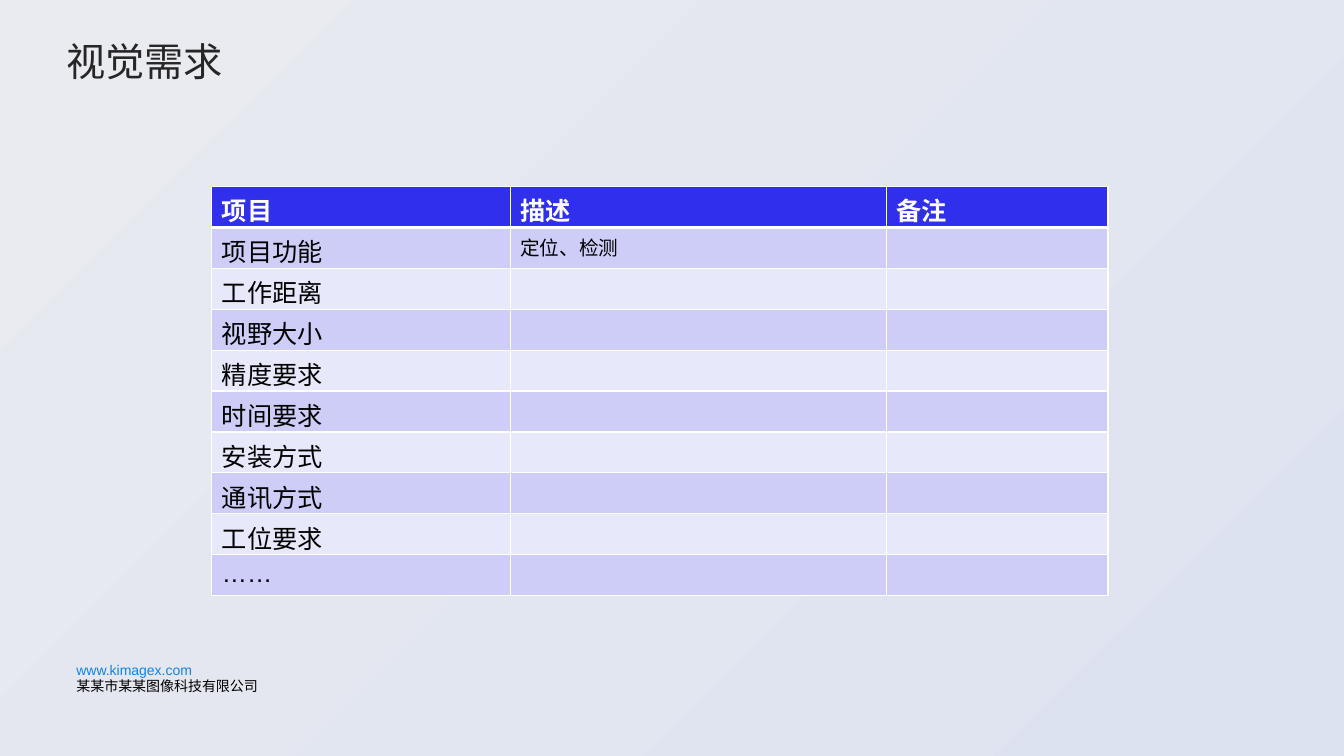
from lxml.etree import SubElement
from pptx import Presentation
from pptx.dml.color import RGBColor
from pptx.enum.text import MSO_ANCHOR, MSO_AUTO_SIZE, PP_ALIGN
from pptx.oxml.ns import qn
from pptx.util import Inches, Pt

COLORS = {
    "background_start": "EAEBF0",
    "background_end": "DDE2F1",
    "title": "262626",
    "link": "1181E9",
    "text": "000000",
    "white": "FFFFFF",
    "header": "2F2FEC",
    "band_dark": "CDCDF8",
    "band_light": "E8E8FB",
}
CJK_FONT = "Noto Sans CJK SC"
COLUMN_WIDTHS = [2.96, 3.73, 2.2]
TABLE_HEIGHT = 4.06
REQUIREMENTS = [
    ["项目", "描述", "备注"],
    ["项目功能", "定位、检测", ""],
    ["工作距离", "", ""],
    ["视野大小", "", ""],
    ["精度要求", "", ""],
    ["时间要求", "", ""],
    ["安装方式", "", ""],
    ["通讯方式", "", ""],
    ["工位要求", "", ""],
    ["……", "", ""],
]


def rgb(name):
    return RGBColor.from_string(COLORS[name])


def add_span(para, text, size, color, font="Arial", bold=False):
    span = para.add_run()
    span.text = text
    span.font.size = Pt(size)
    span.font.bold = bold
    span.font.color.rgb = rgb(color)
    span.font.name = font
    SubElement(span.font._element, qn("a:ea"), typeface=CJK_FONT)


def paint_background(page):
    fill = page.background.fill
    fill.gradient()
    fill.gradient_angle = 315
    for stop, position, color in zip(
        fill.gradient_stops, (0, 1), ("background_start", "background_end")
    ):
        stop.position = position
        stop.color.rgb = rgb(color)


def set_title(page, text):
    title = page.shapes.title
    title.left, title.top = Inches(0.66), Inches(0.37)
    title.width, title.height = Inches(1.56), Inches(0.47)
    frame = title.text_frame
    frame.margin_left = frame.margin_right = 0
    frame.margin_top = frame.margin_bottom = 0
    frame.word_wrap = False
    frame.auto_size = MSO_AUTO_SIZE.NONE
    frame.vertical_anchor = MSO_ANCHOR.MIDDLE
    para = frame.paragraphs[0]
    para.alignment = PP_ALIGN.LEFT
    add_span(para, text, 28, "title", CJK_FONT)


def add_footer(page):
    box = page.shapes.add_textbox(
        Inches(0.66), Inches(6.51), Inches(2.2), Inches(0.44)
    )
    frame = box.text_frame
    frame.word_wrap = True
    add_span(frame.paragraphs[0], "www.kimagex.com", 10, "link")
    add_span(frame.add_paragraph(), "某某市某某图像科技有限公司", 10, "text")


def set_borders(cell, bottom_width):
    properties = cell._tc.get_or_add_tcPr()
    widths = {"a:lnL": 1, "a:lnR": 1, "a:lnT": 1, "a:lnB": bottom_width}
    for index, (side, width) in enumerate(widths.items()):
        line = SubElement(properties, qn(side), w=str(Pt(width)))
        fill = SubElement(line, qn("a:solidFill"))
        SubElement(fill, qn("a:srgbClr"), val=COLORS["white"])
        properties.insert(index, line)


def fill_cell(cell, text, row, column):
    is_header = row == 0
    band = "band_dark" if row % 2 else "band_light"
    cell.fill.solid()
    cell.fill.fore_color.rgb = rgb("header" if is_header else band)
    set_borders(cell, 3 if is_header else 1)
    para = cell.text_frame.paragraphs[0]
    if text:
        size = 14 if column and not is_header else 18
        color = "white" if is_header else "text"
        add_span(para, text, size, color, bold=is_header)
    else:
        para.font.size = Pt(18)


def add_requirements_table(page):
    table = page.shapes.add_table(
        len(REQUIREMENTS), len(COLUMN_WIDTHS), Inches(2.1), Inches(1.85),
        Inches(sum(COLUMN_WIDTHS)), Inches(TABLE_HEIGHT),
    ).table
    table.horz_banding = False
    for column, width in zip(table.columns, COLUMN_WIDTHS):
        column.width = Inches(width)
    for row, texts in enumerate(REQUIREMENTS):
        for column, text in enumerate(texts):
            fill_cell(table.cell(row, column), text, row, column)


def main():
    deck = Presentation()
    deck.slide_width, deck.slide_height = Inches(13.33), Inches(7.5)
    page = deck.slides.add_slide(deck.slide_layouts[5])
    paint_background(page)
    add_footer(page)
    set_title(page, "视觉需求")
    add_requirements_table(page)
    deck.save("out.pptx")


if __name__ == "__main__":
    main()
